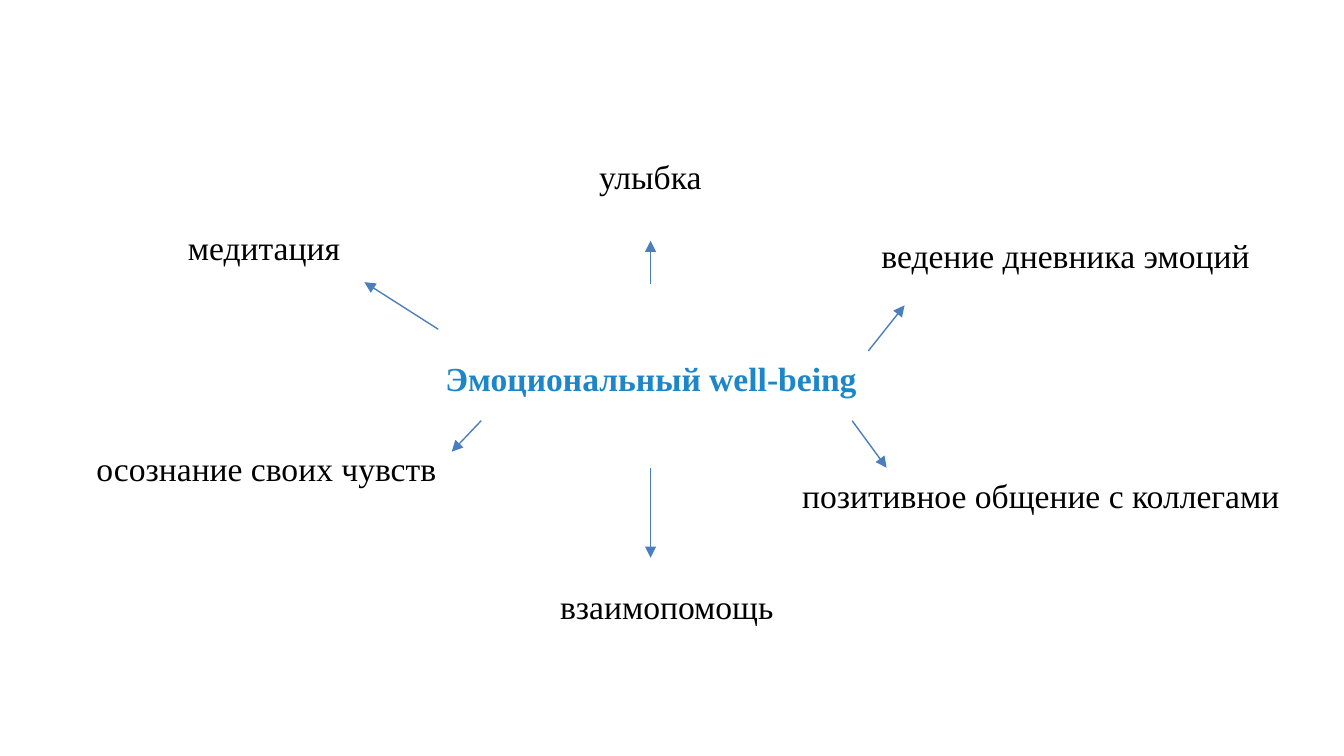
from lxml.etree import SubElement
from pptx import Presentation
from pptx.dml.color import RGBColor
from pptx.enum.shapes import MSO_CONNECTOR
from pptx.enum.text import MSO_AUTO_SIZE, PP_ALIGN
from pptx.oxml.ns import qn
from pptx.util import Pt

BLUE = RGBColor(0x1D, 0x86, 0xC8)
BLACK = RGBColor(0, 0, 0)
ARROW = RGBColor(0x4B, 0x7E, 0xBC)
FONT = "Times New Roman"
LABEL_HEIGHT = 29

TOPIC = ("Эмоциональный well-being", 230.4, 188, 236.9)
PRACTICES = [
    ("медитация", 93.6, 118, 99.4),
    ("ведение дневника эмоций", 465.1, 122.2, 226),
    ("осознание своих чувств", 44.6, 236.2, 197.3),
    ("позитивное общение с коллегами", 422.6, 250.6, 278),
    ("улыбка", 313.9, 80, 69.8),
    ("взаимопомощь", 293, 310.3, 134.6),
]
ARROWS = [
    ((234.8, 176.4), (195.2, 151.2)),
    ((348.5, 152), (348.5, 129)),
    ((465.2, 188), (484.6, 163.6)),
    ((348.5, 250.6), (348.5, 298.8)),
    ((257.8, 225.4), (242, 242)),
    ((456.5, 225.4), (475, 250.6)),
]


def add_label(s, text, left, top, width, color=BLACK, bold=False, align=PP_ALIGN.LEFT):
    sp = s.shapes.add_textbox(Pt(left), Pt(top), Pt(width), Pt(LABEL_HEIGHT))
    tf = sp.text_frame
    tf.word_wrap = False
    tf.auto_size = MSO_AUTO_SIZE.SHAPE_TO_FIT_TEXT
    p = tf.paragraphs[0]
    p.alignment = align
    r = p.add_run()
    r.text = text
    r.font.name = FONT
    r.font.size = Pt(18)
    r.font.bold = bold
    r.font.color.rgb = color


def add_arrow(s, start, end):
    points = [Pt(v) for v in (*start, *end)]
    c = s.shapes.add_connector(MSO_CONNECTOR.STRAIGHT, *points)
    c.line.color.rgb = ARROW
    c.line.width = Pt(0.75)
    SubElement(c.line._get_or_add_ln(), qn("a:tailEnd"), type="triangle")
    SubElement(c._element.spPr, qn("a:effectLst"))


def main():
    prs = Presentation()
    prs.slide_width, prs.slide_height = Pt(720), Pt(405)
    s = prs.slides.add_slide(prs.slide_layouts[6])
    add_label(s, *TOPIC, color=BLUE, bold=True, align=PP_ALIGN.CENTER)
    for practice in PRACTICES:
        add_label(s, *practice)
    for start, end in ARROWS:
        add_arrow(s, start, end)
    prs.save("out.pptx")


if __name__ == "__main__":
    main()
